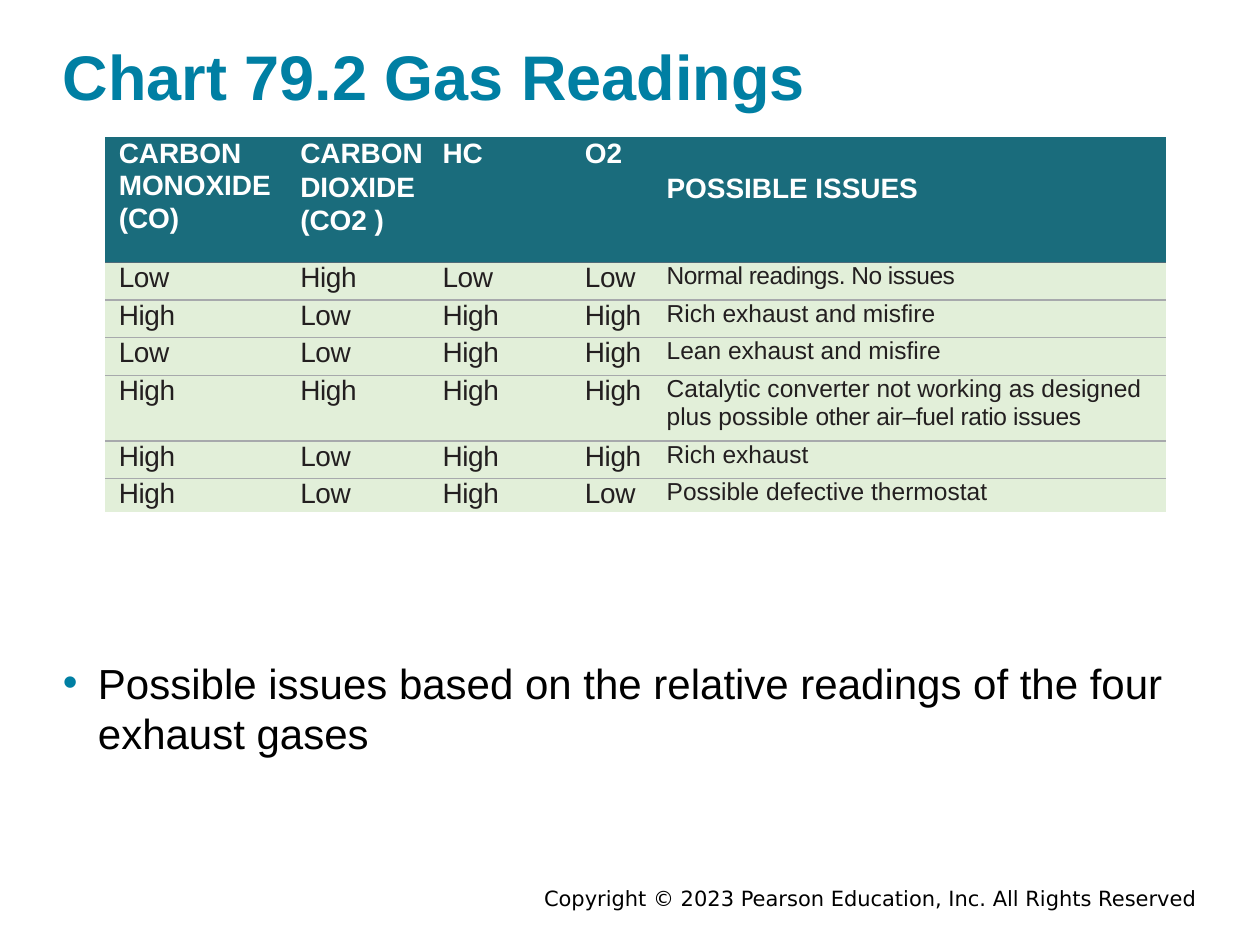
from lxml.etree import SubElement
from pptx import Presentation
from pptx.dml.color import RGBColor
from pptx.enum.text import PP_ALIGN as Align
from pptx.oxml import parse_xml
from pptx.oxml.ns import nsdecls, qn
from pptx.util import Pt

COLORS = {
    "accent": "007FA3", "black": "000000", "white": "FFFFFF",
    "header": "1A6C7C", "body": "E2EFD9", "ink": "231F20",
    "header_rule": "4F6B79", "row_rule": "A7A9AC",
}
COLUMN_WIDTHS = [102.2, 82.1, 80.6, 48.2, 293.1]
ROW_HEIGHTS = [72, 21.5, 21.5, 21.5, 37.5, 21.5, 19]
COLUMN_INDENTS = [7.9, 9.4, 8.6, 9.4, 7.9]
HEADER_SPACING = [1.05, 1.07, 1.05, 1.07, 1.07]
HEADINGS = ["CARBON MONOXIDE (CO)", "CARBON DIOXIDE (CO2 )", "HC", "O2", "POSSIBLE ISSUES"]
READINGS = [
    ["Low", "High", "Low", "Low", [("Normal readings. No issues", -0.3)]],
    ["High", "Low", "High", "High", [("Rich exhaust and misfire", 0)]],
    ["Low", "Low", "High", "High", [("Lean exhaust and misfire", 0)]],
    ["High", "High", "High", "High",
     [("Catalytic converter not working as designed plus possible ", 0),
      ("other air–fuel ratio issues", -0.2)]],
    ["High", "Low", "High", "High", [("Rich exhaust", 0)]],
    ["High", "Low", "High", "Low", [("Possible defective thermostat", 0)]],
]


def color(name):
    return RGBColor.from_string(COLORS[name])


def apply(target, values):
    for name, value in values.items():
        setattr(target, name, value)


def add_run(paragraph, text, size, ink, bold=False, face="Arial", tracking=0):
    run = paragraph.add_run()
    run.text = text
    apply(run.font, {"name": face, "size": Pt(size), "bold": bold})
    run.font.color.rgb = color(ink)
    if tracking:
        run.font._element.set("spc", str(round(tracking * 100)))


def add_text(slide, box, text, side_margin=0, align=Align.LEFT, bullet=None, **style):
    frame = slide.shapes.add_textbox(*map(Pt, box)).text_frame
    apply(frame, {"word_wrap": True, "margin_left": Pt(side_margin),
                  "margin_right": Pt(side_margin)})
    paragraph = frame.paragraphs[0]
    paragraph.alignment = align
    if bullet:
        add_bullet(paragraph, bullet)
    add_run(paragraph, text, **style)


def add_bullet(paragraph, ink):
    properties = paragraph._p.get_or_add_pPr()
    properties.set("marL", str(Pt(20)))
    properties.set("indent", str(-Pt(20)))
    bullet_color = SubElement(properties, qn("a:buClr"))
    SubElement(bullet_color, qn("a:srgbClr")).set("val", COLORS[ink])
    SubElement(properties, qn("a:buFont")).set("typeface", "Arial")
    SubElement(properties, qn("a:buChar")).set("char", "•")


def set_borders(cell, top=None, bottom=None):
    properties = cell._tc.get_or_add_tcPr()
    sides = {"lnL": None, "lnR": None, "lnT": top, "lnB": bottom}
    for place, (side, rule) in enumerate(sides.items()):
        paint = "<a:noFill/>"
        if rule:
            paint = f'<a:solidFill><a:srgbClr val="{COLORS[rule]}"/></a:solidFill>'
        line = f'<a:{side} {nsdecls("a")} w="{Pt(1)}">{paint}</a:{side}>'
        properties.insert(place, parse_xml(line))


def style_cell(cell, fill, indent, **rules):
    apply(cell, {"margin_left": Pt(indent), "margin_right": 0,
                 "margin_top": 0, "margin_bottom": 0})
    cell.fill.solid()
    cell.fill.fore_color.rgb = color(fill)
    set_borders(cell, **rules)
    return cell.text_frame.paragraphs[0]


def fill_header(table):
    for column, heading in enumerate(HEADINGS):
        cell = table.cell(0, column)
        paragraph = style_cell(cell, "header", COLUMN_INDENTS[column], bottom="header_rule")
        paragraph.line_spacing = HEADER_SPACING[column]
        add_run(paragraph, heading, 16, "white", bold=True)
    table.cell(0, len(HEADINGS) - 1).margin_top = Pt(19.7)


def fill_readings(table):
    for row, (*levels, issue) in enumerate(READINGS, 1):
        rules = {"top": "header_rule" if row == 1 else "row_rule",
                 "bottom": "row_rule" if row < len(READINGS) else None}
        contents = [([(level, -0.2)], 16) for level in levels] + [(issue, 14)]
        for column, (parts, size) in enumerate(contents):
            paragraph = style_cell(table.cell(row, column), "body",
                                   COLUMN_INDENTS[column], **rules)
            for text, tracking in parts:
                add_run(paragraph, text, size, "ink", tracking=tracking)


def add_gas_table(slide):
    table = slide.shapes.add_table(
        len(ROW_HEIGHTS), len(COLUMN_WIDTHS), Pt(60), Pt(78),
        Pt(sum(COLUMN_WIDTHS)), Pt(sum(ROW_HEIGHTS))).table
    apply(table, {"first_row": False, "horz_banding": False})
    for column, width in zip(table.columns, COLUMN_WIDTHS):
        column.width = Pt(width)
    for row, height in zip(table.rows, ROW_HEIGHTS):
        row.height = Pt(height)
    fill_header(table)
    fill_readings(table)


def main():
    deck = Presentation()
    apply(deck, {"slide_width": Pt(720), "slide_height": Pt(540)})
    slide = deck.slides.add_slide(deck.slide_layouts[6])
    add_text(slide, (127.5, 502.5, 563.5, 22),
             "Copyright © 2023 Pearson Education, Inc. All Rights Reserved",
             side_margin=7.2, align=Align.RIGHT, size=12, ink="black", face="DejaVu Sans")
    add_text(slide, (36, 18, 648, 51), "Chart 79.2 Gas Readings",
             size=36, ink="accent", bold=True)
    add_gas_table(slide)
    add_text(slide, (36, 372, 648, 66),
             "Possible issues based on the relative readings of the four exhaust gases",
             bullet="accent", size=24, ink="black")
    deck.save("out.pptx")


if __name__ == "__main__":
    main()
